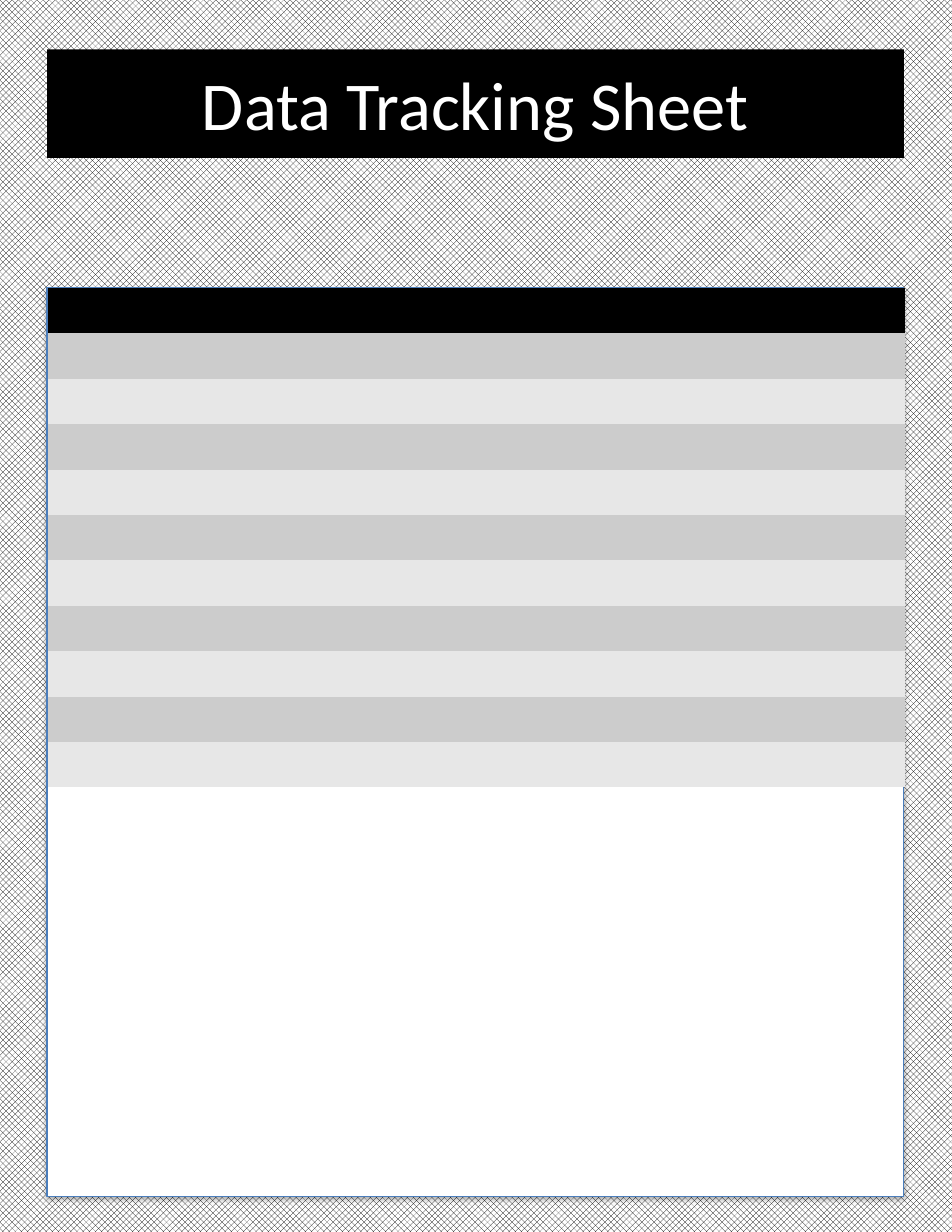
from lxml import etree
from pptx import Presentation
from pptx.dml.color import RGBColor
from pptx.enum import dml, shapes, text
from pptx.oxml.ns import qn
from pptx.util import Inches, Pt

BLACK = RGBColor(0x00, 0x00, 0x00)
WHITE = RGBColor(0xFF, 0xFF, 0xFF)
BLUE = RGBColor(0x4B, 0x7E, 0xBC)
DARK = RGBColor(0xCC, 0xCC, 0xCC)
LIGHT = RGBColor(0xE7, 0xE7, 0xE7)
NO_GRID = "{2D5ABB26-0587-4C30-8999-92F81FD0307C}"

LEFT, WIDTH = 0.42, 7.65
COLS = [1.14, 1.15, 0.26] + [0.85] * 6
ROWS = 11


def back(slide):
    fill = slide.background.fill
    fill.patterned()
    fill.pattern = dml.MSO_PATTERN.OUTLINED_DIAMOND
    fill.fore_color.rgb = BLACK
    fill.back_color.rgb = WHITE


def box(slide, top, height, color, line=None):
    """Add a full-width rectangle with no shadow."""
    shape = slide.shapes.add_shape(
        shapes.MSO_SHAPE.RECTANGLE,
        Inches(LEFT), Inches(top), Inches(WIDTH), Inches(height))
    shape.shadow.inherit = False
    shape.fill.solid()
    shape.fill.fore_color.rgb = color
    if line is None:
        shape.line.fill.background()
    else:
        shape.line.color.rgb = line
        shape.line.width = Pt(0.75)
    return shape


def shade(shape):
    """Give the shape a soft shadow straight below it."""
    effects = shape._element.spPr.find(qn("a:effectLst"))
    outer = etree.SubElement(
        effects, qn("a:outerShdw"), blurRad=str(Pt(3.1)), dist=str(Pt(1.8)),
        dir=str(90 * 60000), rotWithShape="0")
    color = etree.SubElement(outer, qn("a:srgbClr"), val=str(BLACK))
    etree.SubElement(color, qn("a:alpha"), val="35000")


def write(shape, words, size=44, color=WHITE, font="Calibri"):
    frame = shape.text_frame
    frame.word_wrap = True
    frame.vertical_anchor = text.MSO_ANCHOR.MIDDLE
    para = frame.paragraphs[0]
    para.alignment = text.PP_ALIGN.CENTER
    run = para.add_run()
    run.text = words
    run.font.size = Pt(size)
    run.font.name = font
    run.font.color.rgb = color


def grid(slide, top, height):
    """Add the empty table: a black header over banded rows."""
    table = slide.shapes.add_table(
        ROWS, len(COLS), Inches(LEFT + 0.01), Inches(top),
        Inches(WIDTH), Inches(height)).table
    table._tbl.tblPr.find(qn("a:tableStyleId")).text = NO_GRID
    for col, width in zip(table.columns, COLS):
        col.width = Inches(width)
    for i, row in enumerate(table.rows):
        color = BLACK if i == 0 else DARK if i % 2 else LIGHT
        for cell in row.cells:
            cell.fill.solid()
            cell.fill.fore_color.rgb = color


def main():
    deck = Presentation()
    deck.slide_width, deck.slide_height = Inches(8.5), Inches(11)
    slide = deck.slides.add_slide(deck.slide_layouts[6])
    back(slide)
    shade(box(slide, 2.57, 8.11, WHITE, line=BLUE))
    write(box(slide, 0.44, 0.97, BLACK), "Data Tracking Sheet")
    grid(slide, 2.57, 4.46)
    deck.save("out.pptx")


if __name__ == "__main__":
    main()
